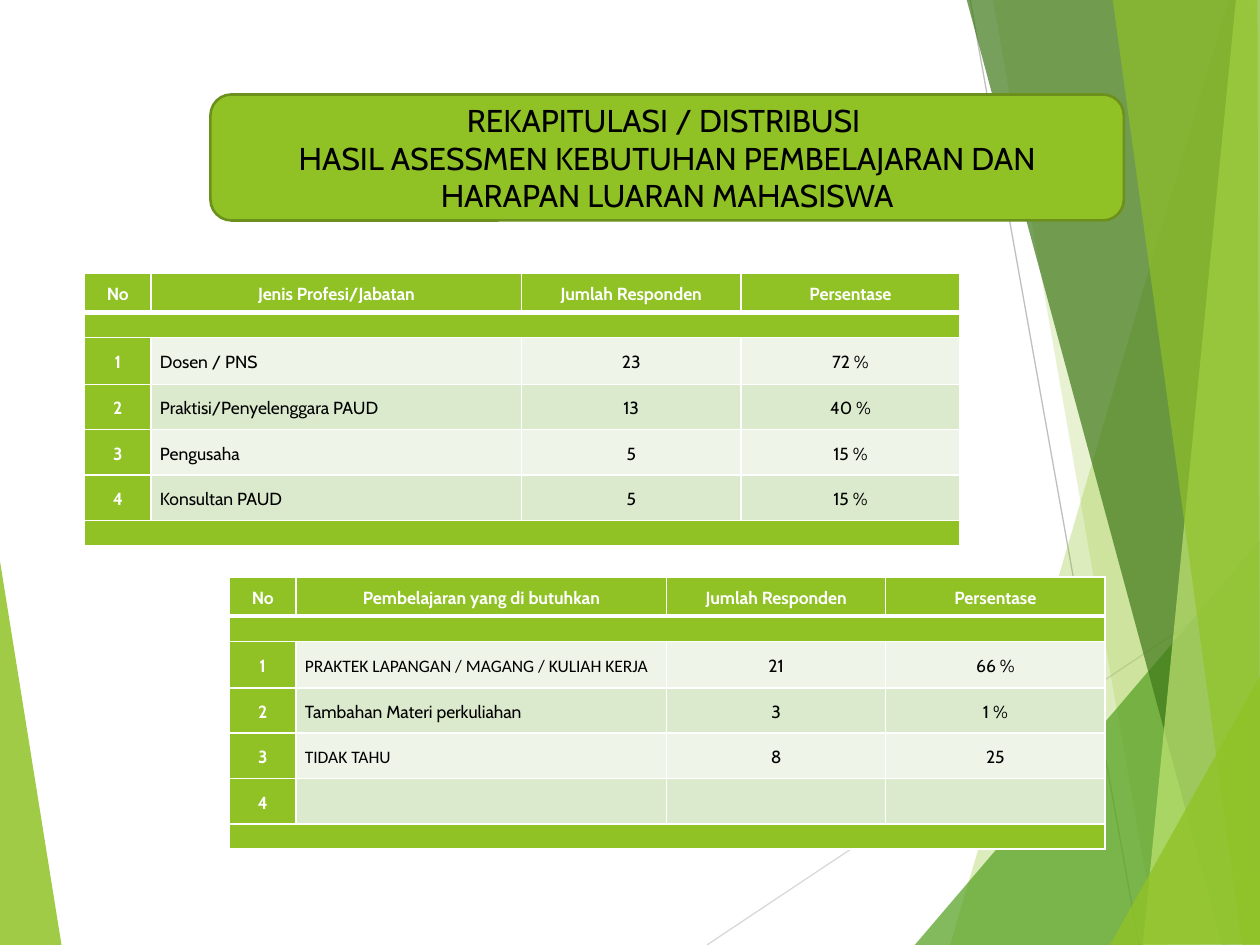
from lxml import etree
from pptx import Presentation
from pptx.dml.color import RGBColor
from pptx.enum.shapes import MSO_CONNECTOR, MSO_SHAPE
from pptx.enum.text import MSO_ANCHOR, PP_ALIGN
from pptx.oxml.ns import qn
from pptx.util import Inches, Pt

GREEN, WHITE, BLACK = "90C226", "FFFFFF", "000000"
BANDS = ("EEF4E8", "DBE9CD")
COLUMN_WIDTHS = (0.53, 2.94, 1.74, 1.74)
ROW_HEIGHTS = (0.31, 0.2, 0.37, 0.36, 0.36, 0.36, 0.2)

LEFT_WEDGE = ([(-0.01, 4.39), (0.49, 7.51), (-0.01, 7.5)], GREEN, 85)
RIGHT_FACETS = [
    ([(9.75, 0), (7.54, 7.5), (10.02, 7.51), (10.01, 0.01)], GREEN, 30),
    ([(7.88, -0.01), (9.19, 7.5), (10.01, 7.5), (10.01, -0.01)], GREEN, 20),
    ([(7.26, 7.5), (10, 4.29), (10.01, 7.5)], "54A021", 72),
    ([(7.67, -0.01), (9.7, 7.5), (10.01, 7.49), (10.01, -0.01)], "3F7819", 70),
    ([(9.81, -0.01), (9.07, 7.5), (10.01, 7.5), (10, -0.01)], "C0E474", 70),
    ([(8.83, -0.01), (9.86, 7.5), (10, 7.5), (9.98, -0.01)], GREEN, 65),
    ([(8.81, 7.5), (10.01, 5.35), (10.01, 7.49)], GREEN, 80),
]
HAIRLINES = [((5.61, 7.5), (10.01, 4.57), "D9D9D9"), ((7.7, 0), (9.04, 7.5), "BFBFBF")]

PROFESSIONS = [
    ("No", "Jenis Profesi/Jabatan", "Jumlah Responden", "Persentase"),
    ("1", "Dosen / PNS", "23", "72 %"),
    ("2", "Praktisi/Penyelenggara PAUD", "13", "40 %"),
    ("3", "Pengusaha", "5", "15 %"),
    ("4", "Konsultan PAUD", "5", "15 %"),
]
LEARNING_NEEDS = [
    ("No", "Pembelajaran yang di butuhkan", "Jumlah Responden", "Persentase"),
    ("1", "PRAKTEK LAPANGAN / MAGANG / KULIAH KERJA", "21", "66 %"),
    ("2", "Tambahan Materi perkuliahan", "3", "1 %"),
    ("3", "TIDAK TAHU", "8", "25"),
    ("4", "", "", ""),
]


def color(hex_string):
    return RGBColor.from_string(hex_string)


def fill_solid(fill, hex_string):
    fill.solid()
    fill.fore_color.rgb = color(hex_string)


def add_run(paragraph, text, size, hex_string, font="Cabin", bold=False):
    run = paragraph.add_run()
    run.text = text
    run.font.name = font
    run.font.size = Pt(size)
    run.font.bold = bold
    run.font.color.rgb = color(hex_string)


def add_facet(slide, points, hex_string, opacity):
    corners = [(Inches(x), Inches(y)) for x, y in points]
    builder = slide.shapes.build_freeform(*corners[0])
    builder.add_line_segments(corners[1:], close=True)
    shape = builder.convert_to_shape()
    shape.shadow.inherit = False
    shape.line.fill.background()
    fill_solid(shape.fill, hex_string)
    fill_color = shape._element.spPr.find(f"{qn('a:solidFill')}/{qn('a:srgbClr')}")
    etree.SubElement(fill_color, qn("a:alpha"), val=str(opacity * 1000))


def add_hairline(slide, start, end, hex_string):
    connector = slide.shapes.add_connector(
        MSO_CONNECTOR.STRAIGHT, *(Inches(value) for value in (*start, *end)))
    connector.line.color.rgb = color(hex_string)
    connector.line.width = Pt(0.75)
    etree.SubElement(connector._element.spPr, qn("a:effectLst"))


def add_backdrop(slide):
    add_facet(slide, *LEFT_WEDGE)
    for hairline in HAIRLINES:
        add_hairline(slide, *hairline)
    for facet in RIGHT_FACETS:
        add_facet(slide, *facet)


def add_title(slide, left, top, width, height):
    shape = slide.shapes.add_shape(
        MSO_SHAPE.ROUNDED_RECTANGLE, Inches(left), Inches(top), Inches(width), Inches(height))
    shape.shadow.inherit = False
    fill_solid(shape.fill, GREEN)
    shape.line.color.rgb = color("6B901C")
    shape.line.width = Pt(1.5)
    frame = shape.text_frame
    frame.word_wrap = True
    frame.vertical_anchor = MSO_ANCHOR.MIDDLE
    lines = ("REKAPITULASI / DISTRIBUSI ",
             "HASIL ASESSMEN KEBUTUHAN PEMBELAJARAN DAN HARAPAN LUARAN MAHASISWA")
    for index, line in enumerate(lines):
        paragraph = frame.add_paragraph() if index else frame.paragraphs[0]
        paragraph.alignment = PP_ALIGN.CENTER
        add_run(paragraph, line, 18, BLACK)


def set_borders(cell, bottom_width):
    """Draw white borders, 1 pt except at the bottom."""
    properties = cell._tc.get_or_add_tcPr()
    widths = {"a:lnL": 1, "a:lnR": 1, "a:lnT": 1, "a:lnB": bottom_width}
    for index, (tag, width) in enumerate(widths.items()):
        border = etree.Element(qn(tag), w=str(Pt(width)))
        fill = etree.SubElement(border, qn("a:solidFill"))
        etree.SubElement(fill, qn("a:srgbClr"), val=WHITE)
        properties.insert(index, border)


def style_cell(cell, hex_string, bottom_width=1):
    fill_solid(cell.fill, hex_string)
    set_borders(cell, bottom_width)
    cell.vertical_anchor = MSO_ANCHOR.MIDDLE
    cell.margin_left = cell.margin_right = Inches(0.07)
    cell.margin_top = cell.margin_bottom = 0


def write_cell(cell, text, centered, hex_string, bold):
    paragraph = cell.text_frame.paragraphs[0]
    paragraph.line_spacing = 1.15
    paragraph.alignment = PP_ALIGN.CENTER if centered else PP_ALIGN.LEFT
    if text:
        font = "Calibri" if text.isupper() and not centered and "PAUD" not in text \
            and "PNS" not in text else "Cabin"
        add_run(paragraph, text, 10, hex_string, font, bold)
    else:
        etree.SubElement(paragraph._p, qn("a:endParaRPr"), sz="1000")


def add_divider_row(table, row):
    for column in range(len(COLUMN_WIDTHS)):
        cell = table.cell(row, column)
        style_cell(cell, GREEN)
        write_cell(cell, "", True, WHITE, False)
    table.cell(row, 0).merge(table.cell(row, len(COLUMN_WIDTHS) - 1))


def add_survey_table(slide, left, top, records):
    """Header, divider, one banded row per record, closing divider."""
    table = slide.shapes.add_table(
        len(ROW_HEIGHTS), len(COLUMN_WIDTHS), Inches(left), Inches(top),
        Inches(sum(COLUMN_WIDTHS)), Inches(sum(ROW_HEIGHTS))).table
    for column, width in zip(table.columns, COLUMN_WIDTHS):
        column.width = Inches(width)
    for row, height in zip(table.rows, ROW_HEIGHTS):
        row.height = Inches(height)
    for index, record in enumerate(records):
        is_header = index == 0
        row = 0 if is_header else index + 1
        for column, text in enumerate(record):
            is_heading = is_header or column == 0
            cell = table.cell(row, column)
            style_cell(cell, GREEN if is_heading else BANDS[(index - 1) % 2],
                       3 if is_header else 1)
            write_cell(cell, text, is_header or column != 1,
                       WHITE if is_heading else BLACK, is_heading)
    for row in (1, len(ROW_HEIGHTS) - 1):
        add_divider_row(table, row)


def main():
    presentation = Presentation()
    presentation.slide_width = Inches(10)
    presentation.slide_height = Inches(7.5)
    slide = presentation.slides.add_slide(presentation.slide_layouts[6])
    add_backdrop(slide)
    add_title(slide, 1.67, 0.75, 7.25, 1)
    add_survey_table(slide, 0.67, 2.17, PROFESSIONS)
    add_survey_table(slide, 1.82, 4.58, LEARNING_NEEDS)
    presentation.save("out.pptx")


if __name__ == "__main__":
    main()
